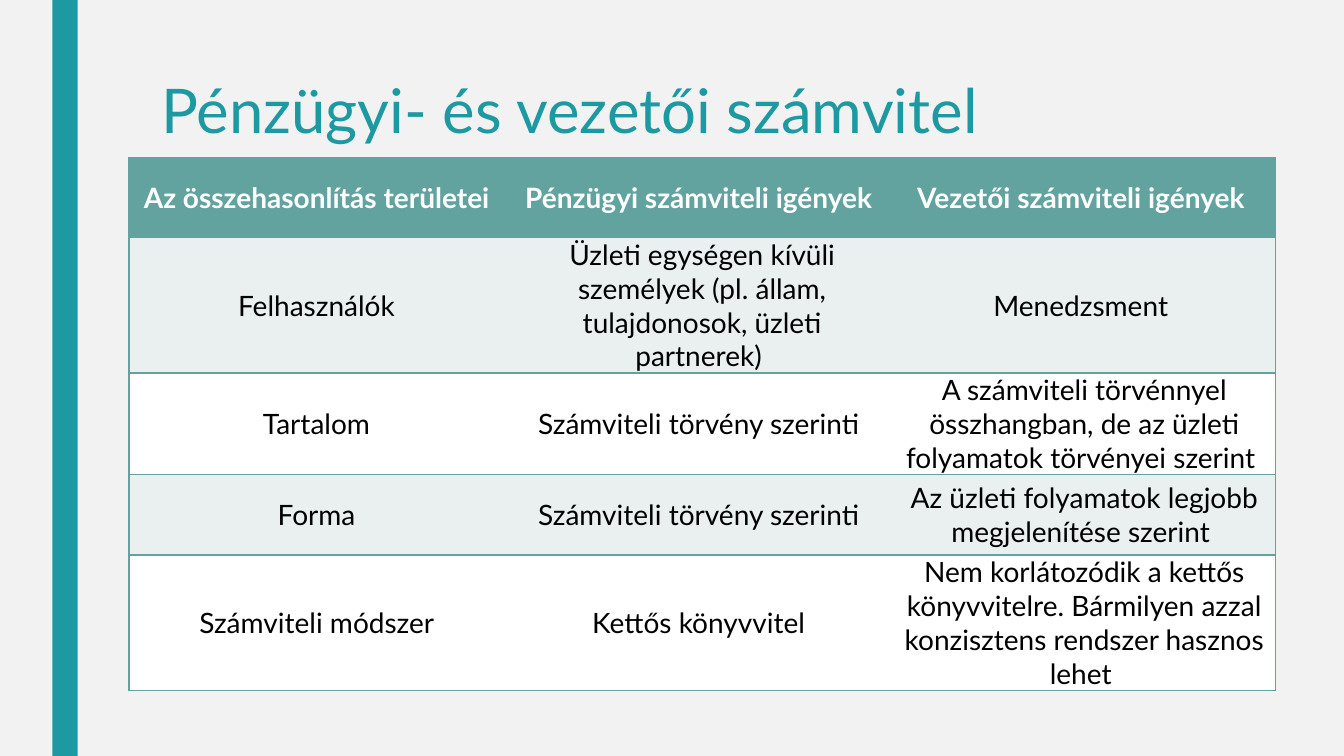
from lxml import etree
from pptx import Presentation
from pptx import util as u
from pptx.dml.color import RGBColor
from pptx.enum import shapes, text
from pptx.oxml import ns

PX = 9144  # 100 px to the inch
COLORS = {"back": "F2F2F2", "accent": "1D9AA1", "header": "62A39F",
          "band": "EAF0F0", "plain": "FFFFFF", "ink": "000000"}
ROWS = [
    ("Az összehasonlítás területei ", "Pénzügyi számviteli igények ",
     "Vezetői számviteli igények "),
    ("Felhasználók ",
     "Üzleti egységen kívüli személyek (pl. állam, tulajdonosok, üzleti partnerek) ",
     "Menedzsment "),
    ("Tartalom ", "Számviteli törvény szerinti ",
     "A számviteli törvénnyel összhangban, de az üzleti folyamatok törvényei szerint "),
    ("Forma ", "Számviteli törvény szerinti ",
     "Az üzleti folyamatok legjobb megjelenítése szerint "),
    ("Számviteli módszer ", "Kettős könyvvitel ",
     "Nem korlátozódik a kettős könyvvitelre. Bármilyen azzal konzisztens "
     "rendszer hasznos lehet "),
]


def rgb(name):
    return RGBColor.from_string(COLORS[name])


def write(paragraph, words, size, color, bold=False):
    run = paragraph.add_run()
    run.text = words
    run.font.color.rgb = rgb(color)
    for key, value in {"name": "Lato", "size": u.Pt(size), "bold": bold}.items():
        setattr(run.font, key, value)


deck = Presentation()
deck.slide_width, deck.slide_height = 1333 * PX, 750 * PX
slide = deck.slides.add_slide(deck.slide_layouts[6])
slide.background.fill.solid()
slide.background.fill.fore_color.rgb = rgb("back")

# Side stripe
stripe = slide.shapes.add_shape(shapes.MSO_SHAPE.RECTANGLE, 52 * PX, 0, 25 * PX, 750 * PX)
stripe.shadow.inherit = False
stripe.fill.solid()
stripe.fill.fore_color.rgb = rgb("accent")
stripe.line.fill.background()

# Comparison table
comparison = slide.shapes.add_table(len(ROWS), 3, 128 * PX, 156 * PX,
                                    1137 * PX, 400 * PX).table
cell_format = {"margin_left": 7 * PX, "margin_right": 7 * PX, "margin_top": 0,
               "margin_bottom": 0, "vertical_anchor": text.MSO_ANCHOR.MIDDLE}
for r, row in enumerate(ROWS):
    comparison.rows[r].height = 80 * PX
    for c, words in enumerate(row):
        cell = comparison.cell(r, c)
        for key, value in cell_format.items():
            setattr(cell, key, value)

        # Rules run across the rows and around the outside
        drawn = {"lnL": c == 0, "lnR": c == 2, "lnT": True, "lnB": True}
        for side, visible in drawn.items():
            border = etree.SubElement(cell._tc.get_or_add_tcPr(), ns.qn(f"a:{side}"), w="12700")
            if visible:
                paint = etree.SubElement(border, ns.qn("a:solidFill"))
                etree.SubElement(paint, ns.qn("a:srgbClr"), val=COLORS["header"])
            else:
                etree.SubElement(border, ns.qn("a:noFill"))

        cell.fill.solid()
        cell.fill.fore_color.rgb = rgb("header" if r == 0 else "band" if r % 2 else "plain")
        entry = cell.text_frame.paragraphs[0]
        entry.alignment = text.PP_ALIGN.CENTER
        write(entry, words, 20, "ink" if r else "plain", r == 0)

# Title
title = slide.shapes.add_textbox(150 * PX, 75 * PX, 1050 * PX, 162 * PX).text_frame
title.word_wrap = True
title.paragraphs[0].line_spacing = 0.89
write(title.paragraphs[0], "Pénzügyi- és vezetői számvitel", 44, "accent")

deck.save("out.pptx")
